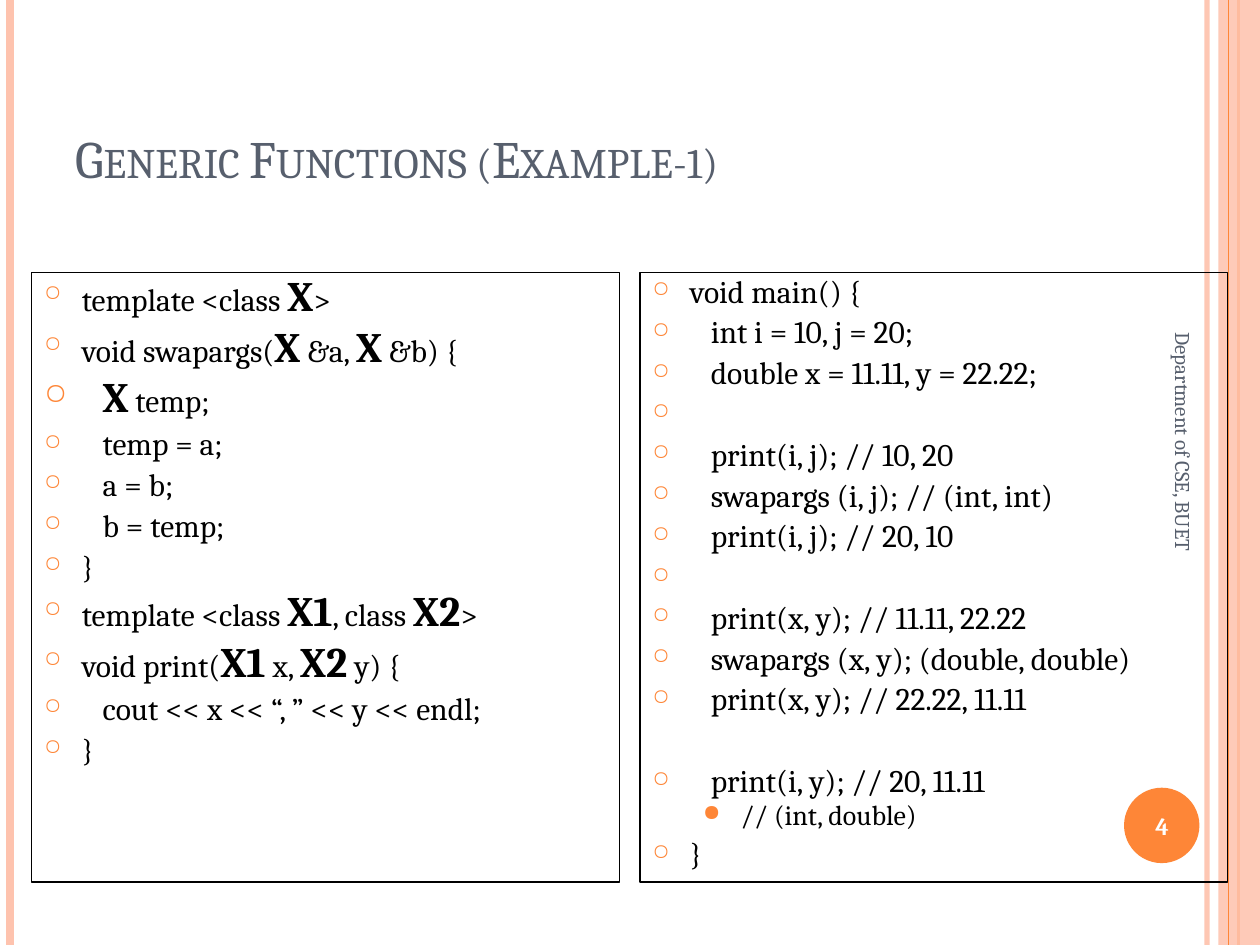
import lxml.etree
import pptx
import pptx.dml.color
import pptx.enum.shapes
import pptx.enum.text
import pptx.oxml.ns
import pptx.util

Cm = pptx.util.Cm
Pt = pptx.util.Pt
RGB = pptx.dml.color.RGBColor
qn = pptx.oxml.ns.qn
Shape = pptx.enum.shapes.MSO_SHAPE
Anchor = pptx.enum.text.MSO_ANCHOR
Align = pptx.enum.text.PP_ALIGN

ORANGE = RGB(0xFE, 0x86, 0x37)
PEACH = RGB(0xFE, 0xC3, 0xAE)
SLATE = RGB(0x57, 0x5F, 0x6D)
BLACK = RGB(0, 0, 0)
WHITE = RGB(255, 255, 255)

WIDE, HIGH = 25.4, 19.05
HANG = 0.76  # room for a bullet, cm
STEP = 0.42  # indent of a code block, cm
GAP = 29.4   # space before a code line that follows an empty row, pt

# Code rows: (kind, text); *...* marks a type parameter
LEFT = [
    ("top", "template <class *X*>"),
    ("top", "void swapargs(*X* &a, *X* &b) {"),
    ("in", "*X* temp;"),
    ("in", "temp = a;"),
    ("in", "a = b;"),
    ("in", "b = temp;"),
    ("top", "}"),
    ("top", "template <class *X1*, class *X2*>"),
    ("top", "void print(*X1* x, *X2* y) {"),
    ("in", "cout << x << “, ” << y << endl;"),
    ("top", "}"),
]
RIGHT = [
    ("top", "void main() {"),
    ("in", "int i = 10, j = 20;"),
    ("in", "double x = 11.11, y = 22.22;"),
    ("in", " "),
    ("in", "print(i, j); // 10, 20"),
    ("in", "swapargs (i, j); // (int, int)"),
    ("in", "print(i, j); // 20, 10"),
    ("in", " "),
    ("in", "print(x, y); // 11.11, 22.22"),
    ("in", "swapargs (x, y); (double, double)"),
    ("in", "print(x, y); // 22.22, 11.11"),
    ("gap", "print(i, y); // 20, 11.11"),
    ("sub", "// (int, double)"),
    ("top", "}"),
]
# kind: level, left margin, hang, space before, size, bullet, bullet percent
KINDS = {
    "top": (0, HANG, HANG, 6, 18, "○", 70),
    "in": (0, HANG + STEP, HANG + STEP, 6, 18, "○", 70),
    "gap": (0, HANG + STEP, HANG + STEP, GAP, 18, "○", 70),
    "sub": (1, 1.78, HANG, 3.2, 16, "●", 80),
}


class Deck:
    def __init__(self, font="Cambria"):
        self.font = font
        self.prs = pptx.Presentation()
        self.prs.slide_width, self.prs.slide_height = Cm(WIDE), Cm(HIGH)
        self.slide = self.prs.slides.add_slide(self.prs.slide_layouts[6])

    def fade(self, item, alpha):
        for color in item._element.spPr.iter(qn("a:srgbClr")):
            lxml.etree.SubElement(color, qn("a:alpha"), val=str(alpha * 1000))

    def stripe(self, x, color, width, alpha=100):
        line = self.slide.shapes.add_connector(
            pptx.enum.shapes.MSO_CONNECTOR.STRAIGHT, Cm(x), 0, Cm(x), Cm(HIGH))
        line.line.color.rgb = color
        line.line.width = Pt(width)
        if alpha < 100:
            self.fade(line, alpha)
        lxml.etree.SubElement(line._element.spPr, qn("a:effectLst"))

    def solid(self, kind, box, color, alpha=100):
        shape = self.slide.shapes.add_shape(kind, *map(Cm, box))
        shape.shadow.inherit = False
        shape.fill.solid()
        shape.fill.fore_color.rgb = color
        shape.line.fill.background()
        if alpha < 100:
            self.fade(shape, alpha)

    def style(self, run, size, color, bold=False):
        run.font.name = self.font
        run.font.size = Pt(size)
        run.font.color.rgb = color
        run.font.bold = bold

    def label(self, box, text, size, color, anchor=Anchor.MIDDLE,
              align=Align.LEFT, bold=False, caps=False, turn=0):
        shape = self.slide.shapes.add_textbox(*map(Cm, box))
        shape.rotation = turn
        frame = shape.text_frame
        frame.word_wrap = True
        frame.vertical_anchor = anchor
        frame.text = text
        para = frame.paragraphs[0]
        para.alignment = align
        run = para.runs[0]
        self.style(run, size, color, bold)
        if caps:
            run.font._element.set("cap", "small")

    def bullet(self, para, left, hang, char, size):
        props = para._p.get_or_add_pPr()
        props.set("marL", str(Cm(left)))
        props.set("indent", str(-Cm(hang)))
        color = lxml.etree.SubElement(props, qn("a:buClr"))
        lxml.etree.SubElement(color, qn("a:srgbClr"), val=str(ORANGE))
        lxml.etree.SubElement(props, qn("a:buSzPct"), val=str(size * 1000))
        lxml.etree.SubElement(props, qn("a:buChar"), char=char)

    def code(self, box, rows):
        shape = self.slide.shapes.add_textbox(*map(Cm, box))
        shape.line.color.rgb = BLACK
        shape.line.width = Pt(0.75)
        frame = shape.text_frame
        frame.word_wrap = True
        for i, (kind, text) in enumerate(rows):
            level, left, hang, before, size, char, share = KINDS[kind]
            para = frame.add_paragraph() if i else frame.paragraphs[0]
            para.level = level
            para.line_spacing = 0.8
            para.space_before = Pt(before)
            self.bullet(para, left, hang, char, share)
            for n, part in enumerate(text.split("*")):
                if part:
                    run = para.add_run()
                    run.text = part
                    bold = n % 2 == 1
                    self.style(run, 24 if bold else size, BLACK, bold)


def main():
    deck = Deck()

    # Side stripes and number badge
    deck.stripe(24.33, PEACH, 3, 93)
    deck.stripe(0.2, PEACH, 4.5)
    deck.stripe(24.97, ORANGE, 1.5)
    deck.solid(Shape.RECTANGLE, (24.56, 0, 0.84, HIGH), PEACH, 87)
    deck.stripe(24.77, ORANGE, 0.75)
    deck.solid(Shape.OVAL, (22.66, 15.88, 1.52, 1.52), ORANGE)

    # Title, footer and slide number
    deck.label((1.27, 0.76, 20.75, 3.18), "Generic Functions (Example-1)",
               30, SLATE, anchor=Anchor.BOTTOM, caps=True)
    deck.label((19.41, 10.39, 8.89, 1.02), "Department of CSE, BUET",
               12, SLATE, turn=90)
    deck.label((22.58, 15.93, 1.7, 1.45), "4", 14, WHITE,
               align=Align.CENTER, bold=True)

    # Code panels
    for x, rows in ((0.64, LEFT), (12.9, RIGHT)):
        deck.code((x, 5.5, 11.85, 12.28), rows)

    deck.prs.save("out.pptx")


if __name__ == "__main__":
    main()
